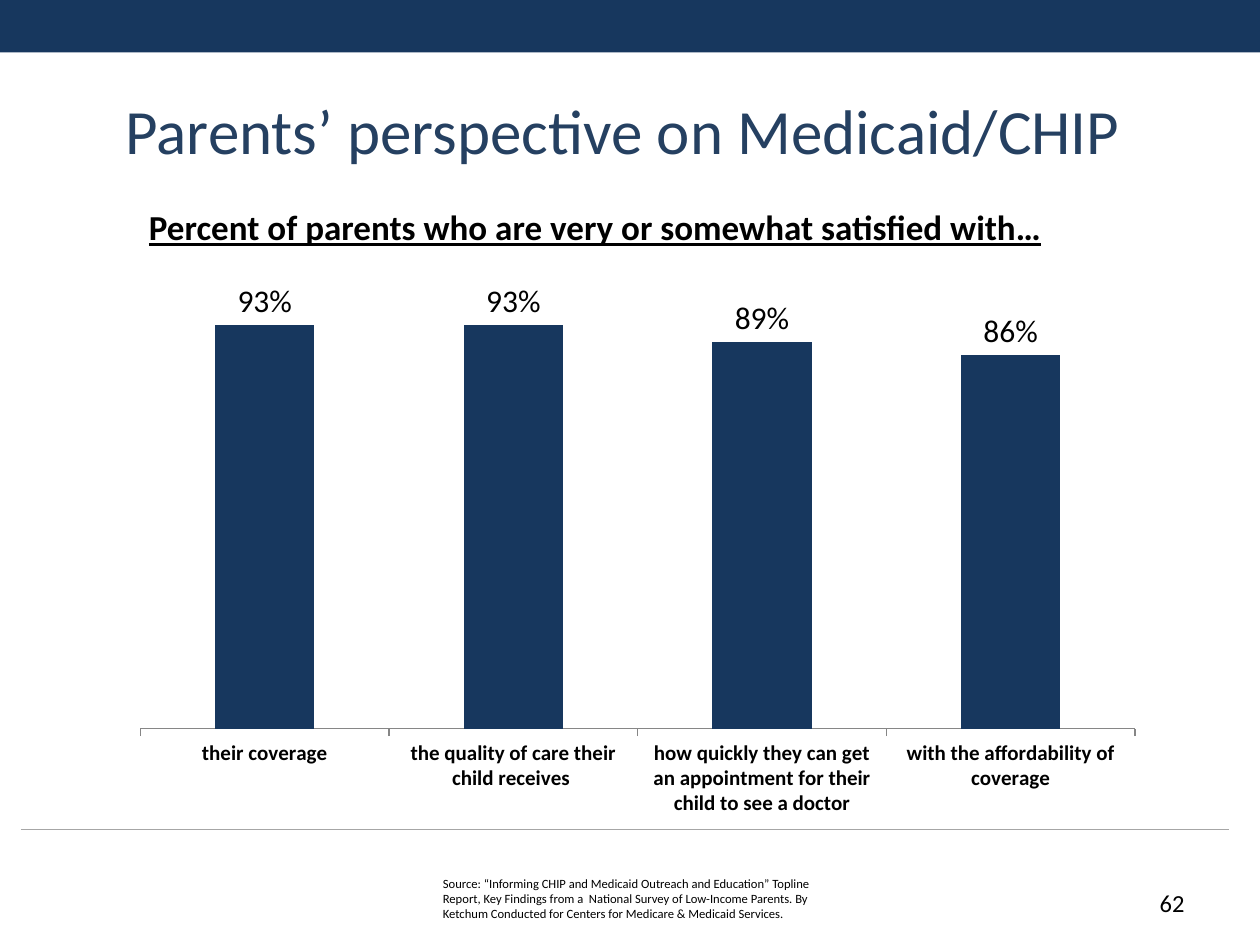
from lxml import etree
from pptx import Presentation
from pptx.chart.data import CategoryChartData as ChartData
from pptx.dml.color import RGBColor
from pptx.enum.chart import XL_CHART_TYPE as Kind
from pptx.enum.chart import XL_LABEL_POSITION as Spot
from pptx.enum.chart import XL_TICK_LABEL_POSITION as Tick
from pptx.enum.chart import XL_TICK_MARK as Mark
from pptx.enum.shapes import MSO_CONNECTOR as Link
from pptx.enum.shapes import MSO_SHAPE as Shape
from pptx.enum.text import MSO_ANCHOR as Anchor
from pptx.enum.text import PP_ALIGN as Align
from pptx.oxml import parse_xml
from pptx.oxml.ns import nsdecls, qn
from pptx.util import Pt

NAVY, BLUE, BLACK = "17375E", "254061", "000000"
RULE, AXIS = "A6A6A6", "868686"
WIDE, HIGH = 720, 540

RATES = {
    "their coverage": 0.93,
    "the quality of care their child receives ": 0.93,
    "how quickly they can get an appointment for their child to see a doctor": 0.89,
    "with the affordability of coverage": 0.86,
}
SOURCE = (
    "Source: “Informing CHIP and Medicaid Outreach and Education” Topline Report, "
    "Key Findings from a  National Survey of Low-Income Parents. By Ketchum "
    "Conducted for Centers for Medicare & Medicaid Services."
)


def tint(code):
    return RGBColor.from_string(code)


def style(font, color=BLACK, **form):
    for key, val in {"name": "Calibri", **form}.items():
        setattr(font, key, val)
    font.color.rgb = tint(color)


def add_text(slide, box, text, align=Align.LEFT, anchor=Anchor.TOP, **form):
    frame = slide.shapes.add_textbox(*map(Pt, box)).text_frame
    frame.word_wrap = True
    frame.vertical_anchor = anchor
    para = frame.paragraphs[0]
    para.alignment = align
    run = para.add_run()
    run.text = text
    style(run.font, **form)


def add_frame(slide, box):
    """Top band and the rule above the footer."""
    left, top, width, height = box
    band = slide.shapes.add_shape(Shape.RECTANGLE, Pt(left), Pt(top), Pt(width), Pt(30))
    band.shadow.inherit = False
    band.fill.solid()
    band.fill.fore_color.rgb = tint(NAVY)
    band.line.fill.background()

    level = Pt(top + height - 66)
    rule = slide.shapes.add_connector(
        Link.STRAIGHT, Pt(left + 12), level, Pt(left + width - 18), level)
    rule.line.color.rgb = tint(RULE)
    rule.line.width = Pt(0.75)
    etree.SubElement(rule.element.spPr, qn("a:effectLst"))


def place_plot(chart, **part):
    """Fix the inner plot area as fractions of the chart."""
    modes = "".join(f'<c:{key}Mode val="edge"/>' for key in "xy")
    sizes = "".join(f'<c:{key} val="{val}"/>' for key, val in part.items())
    area = chart.element.chart.plotArea
    for old in area.findall(qn("c:layout")):
        area.remove(old)
    area.insert(0, parse_xml(
        f'<c:layout {nsdecls("c")}><c:manualLayout><c:layoutTarget val="inner"/>'
        f"{modes}{sizes}</c:manualLayout></c:layout>"))


def add_bars(slide, box):
    data = ChartData(number_format="0%")
    data.categories = list(RATES)
    data.add_series("Series 1", list(RATES.values()))
    chart = slide.shapes.add_chart(Kind.COLUMN_CLUSTERED, *map(Pt, box), data).chart
    chart.has_legend = chart.has_title = False
    style(chart.font, size=Pt(18))
    place_plot(chart, x=0.03, y=0.05, w=0.96, h=0.78)

    # Axes
    cats, vals = chart.category_axis, chart.value_axis
    cats.major_tick_mark = Mark.OUTSIDE
    cats.tick_label_position = Tick.NEXT_TO_AXIS
    cats.format.line.color.rgb = tint(AXIS)
    style(cats.tick_labels.font, size=Pt(12), bold=True)
    form = {"visible": False, "has_major_gridlines": False,
            "minimum_scale": 0, "maximum_scale": 1}
    for key, val in form.items():
        setattr(vals, key, val)

    # Bars and their labels
    plot = chart.plots[0]
    plot.gap_width = 150
    plot.vary_by_categories = False
    fill = plot.series[0].format.fill
    fill.solid()
    fill.fore_color.rgb = tint(NAVY)
    plot.has_data_labels = True
    form = {"show_value": True, "number_format": "0%",
            "number_format_is_linked": False, "position": Spot.OUTSIDE_END}
    for key, val in form.items():
        setattr(plot.data_labels, key, val)
    style(plot.data_labels.font, size=Pt(18))


def add_head(slide, box):
    """Title with the chart heading below it."""
    left, top, width, height = box
    add_text(slide, (left, top, width, 75.6), "Parents’ perspective on Medicaid/CHIP ",
             Align.CENTER, Anchor.MIDDLE, size=Pt(36), color=BLUE)
    add_text(slide, (left + 66, top + height - 32, 540, 32),
             "Percent of parents who are very or somewhat satisfied with…",
             size=Pt(20), bold=True, underline=True)


def add_foot(slide, box):
    """Source note and page number."""
    left, top, width, height = box
    add_text(slide, (left, top, 228, 29), SOURCE, size=Pt(7.2))
    add_text(slide, (left + width - 168, top + height - 29, 168, 29), "62",
             Align.RIGHT, size=Pt(14))


def main():
    deck = Presentation()
    deck.slide_width, deck.slide_height = Pt(WIDE), Pt(HIGH)
    slide = deck.slides.add_slide(deck.slide_layouts[6])
    add_frame(slide, (0, 0, WIDE, HIGH))
    add_head(slide, (12, 36, 696, 110))
    add_bars(slide, (62.5, 152.5, 592, 318))
    add_foot(slide, (246, 497, 438, 36))
    deck.save("out.pptx")


if __name__ == "__main__":
    main()
